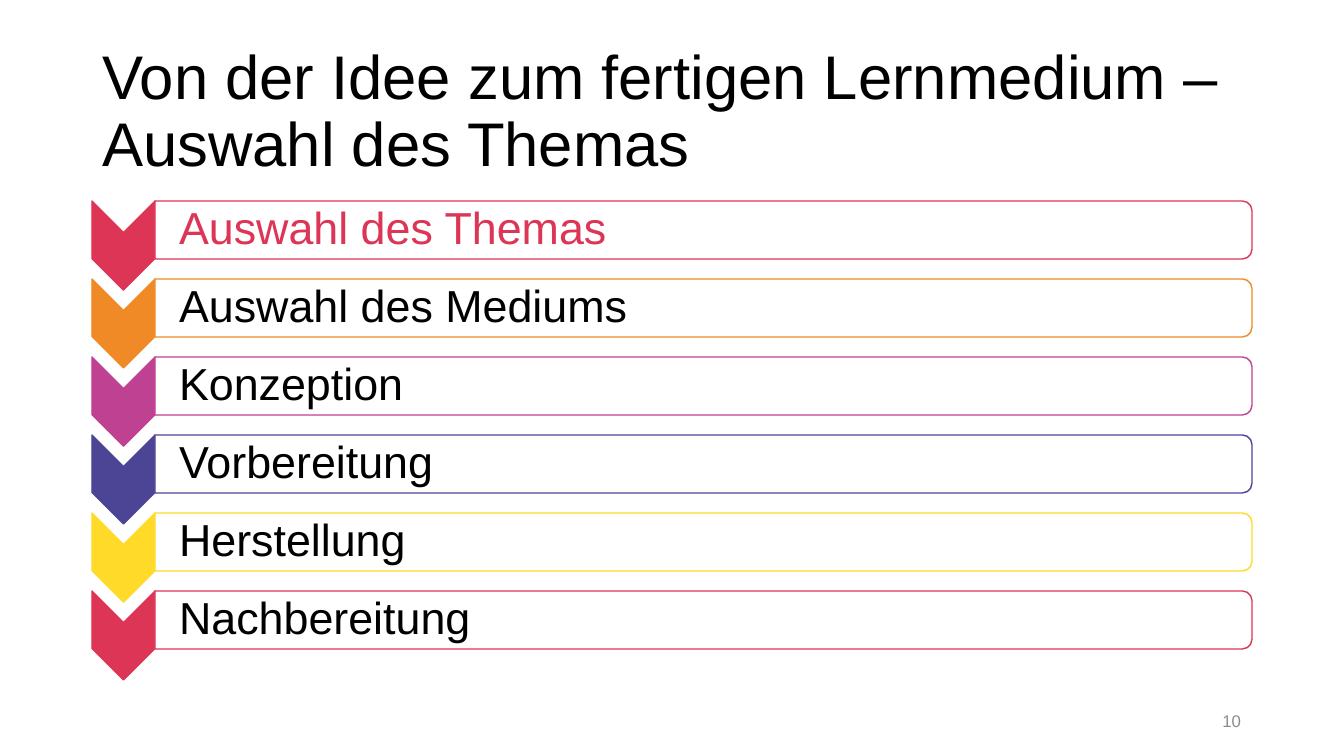
from lxml.etree import SubElement
from pptx import Presentation
from pptx.dml.color import RGBColor
from pptx.enum.shapes import MSO_SHAPE as Preset
from pptx.enum.text import MSO_ANCHOR as Anchor, MSO_AUTO_SIZE as AutoSize, PP_ALIGN as Align
from pptx.oxml.ns import qn
from pptx.util import Emu, Pt

COLORS = {
    "black": "000000", "white": "FFFFFF", "gray": "8C8C8C",
    "red": "DC3555", "orange": "EF8A26", "magenta": "BF4191",
    "violet": "4C4596", "yellow": "FFDA29",
}
STEPS = [
    ("Auswahl des Themas", "red", "red"),
    ("Auswahl des Mediums", "orange", "black"),
    ("Konzeption", "magenta", "black"),
    ("Vorbereitung", "violet", "black"),
    ("Herstellung", "yellow", "black"),
    ("Nachbereitung", "red", "black"),
]
FIRST_TOP, STEP_PITCH = 201, 78


def px(length):
    return Emu(round(length * 914400 / 100.8))


def rgb(name):
    return RGBColor.from_string(COLORS[name])


class SlideBuilder:
    font = "Arial"

    def __init__(self, slide):
        self.slide = slide
        self.shapes = slide.shapes

    def start_group(self):
        self.shapes = self.slide.shapes.add_group_shape().shapes

    def end_group(self):
        self.shapes = self.slide.shapes

    def fill_text(self, frame, text, size, color, align=Align.LEFT, spacing=1.0):
        frame.word_wrap = True
        frame.auto_size = AutoSize.NONE
        frame.vertical_anchor = Anchor.MIDDLE
        paragraph = frame.paragraphs[0]
        paragraph.alignment = align
        paragraph.line_spacing = spacing
        run = paragraph.add_run()
        run.text = text
        run.font.name = self.font
        run.font.size = Pt(size)
        run.font.color.rgb = rgb(color)
        return paragraph

    def title(self, text, left, top, width, height):
        title = self.slide.shapes.title
        title.left, title.top = px(left), px(top)
        title.width, title.height = px(width), px(height)
        self.fill_text(title.text_frame, text, 44, "black", spacing=0.9)

    def turned_shape(self, preset, left, top, width, height, fill, line, alpha=None):
        """Place a shape turned by 90 degrees so that it covers the given box."""
        shift = (width - height) / 2
        shape = self.shapes.add_shape(
            preset, px(left + shift), px(top - shift), px(height), px(width))
        shape.rotation = 90
        shape.shadow.inherit = False
        shape.fill.solid()
        shape.fill.fore_color.rgb = rgb(fill)
        shape.line.color.rgb = rgb(line)
        shape.line.width = Pt(1)
        if alpha is not None:
            fill_color = shape.element.spPr.find(qn("a:solidFill"))[0]
            SubElement(fill_color, qn("a:alpha")).set("val", str(alpha * 1000))

    def text(self, text, left, top, width, height, size, color, insets=None, **style):
        box = self.shapes.add_textbox(px(left), px(top), px(width), px(height))
        frame = box.text_frame
        if insets:
            (frame.margin_left, frame.margin_top,
             frame.margin_right, frame.margin_bottom) = map(px, insets)
        return self.fill_text(frame, text, size, color, **style)

    def step(self, label, top, accent, label_color):
        self.turned_shape(Preset.CHEVRON, 92, top, 63, 89, accent, accent)
        self.turned_shape(Preset.ROUND_2_SAME_RECTANGLE, 155, top, 1097, 58,
                          "white", accent, alpha=90)
        paragraph = self.text(label, 154, top + 3, 1094, 52, 32, label_color,
                              insets=(25, 2, 2, 2), spacing=0.9)
        paragraph.space_after = Pt(5)


def main():
    deck = Presentation()
    deck.slide_width, deck.slide_height = px(1344), px(756)
    builder = SlideBuilder(deck.slides.add_slide(deck.slide_layouts[5]))

    # Title
    builder.title("Von der Idee zum fertigen Lernmedium – Auswahl des Themas",
                  92, 40, 1160, 146)

    # Process steps
    builder.start_group()
    for index, (label, accent, label_color) in enumerate(STEPS):
        builder.step(label, FIRST_TOP + index * STEP_PITCH, accent, label_color)
    builder.end_group()

    # Page number
    builder.text("10", 949, 701, 302, 40, 12, "gray", align=Align.RIGHT)

    deck.save("out.pptx")


if __name__ == "__main__":
    main()
